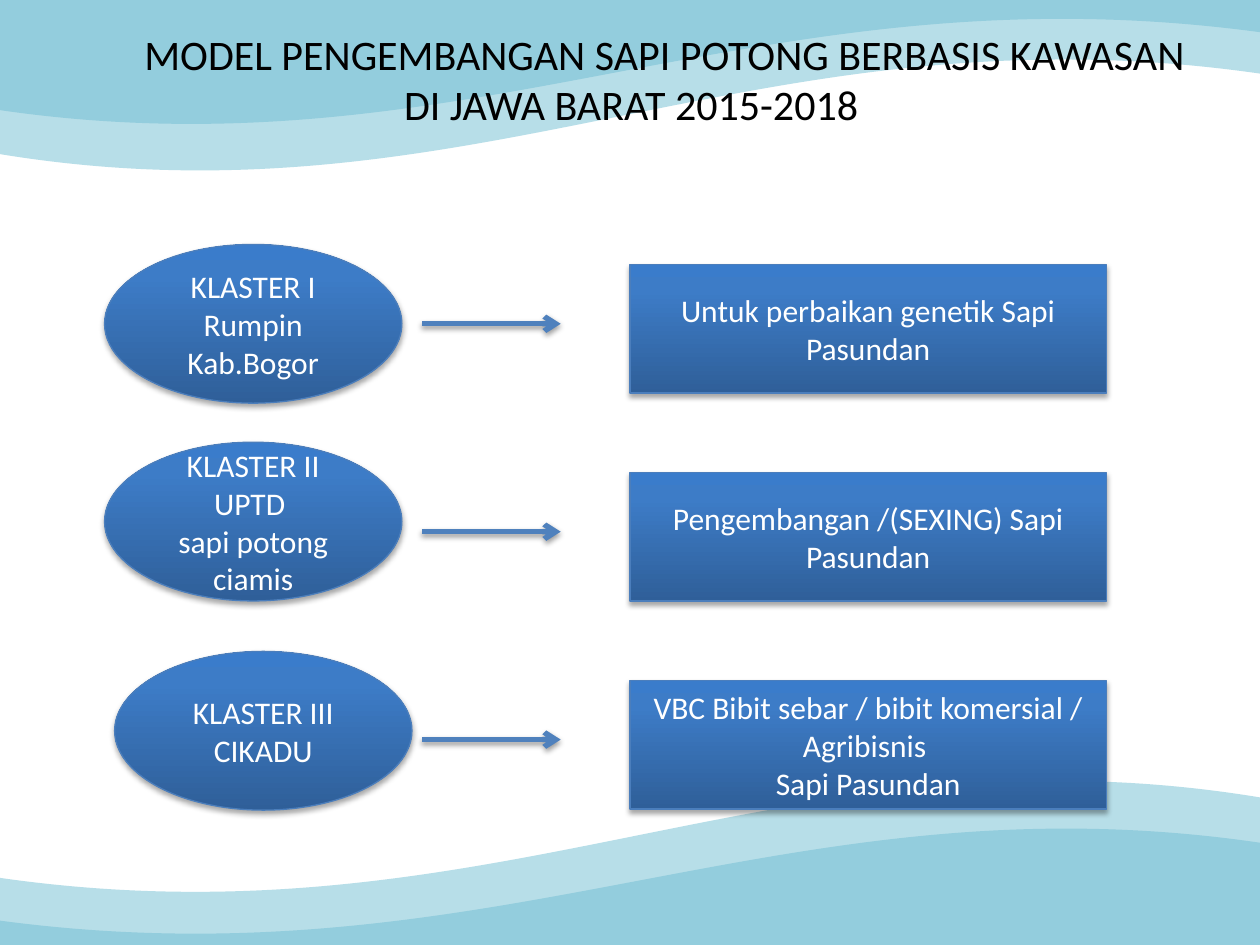
import copy

import pptx
import pptx.dml.color
import pptx.enum.shapes
import pptx.enum.text
import pptx.oxml
import pptx.oxml.ns
import pptx.util
from lxml import etree
from pptx.util import Inches

COLORS = {
    "wave_light": "B7DEE8",
    "wave_dark": "93CDDD",
    "gradient": [(0, "2F5F99"), (0.8, "3D7CC7"), (1, "3A7CCB")],
    "outline": "4B7EBC",
    "arrow": "4F81BD",
    "title": "000000",
    "label": "FFFFFF",
}
FONT = "Calibri"
TITLE = "MODEL PENGEMBANGAN SAPI POTONG BERBASIS KAWASAN DI JAWA BARAT 2015-2018"

# Color, top box, bottom box, then points (2 numbers) and Bézier segments (6 numbers)
WAVES = [
    ("wave_light", (-0.04, -0.03, 10.08, 1.38), (-0.05, 6.2),
     [(3.58, -0.03), (6.09, -0.03, 9, -0.02, 10.04, 0), (10.04, 0.59),
      (6.03, 0, 3.78, 1.85, -0.02, 1.22), (-0.04, -0.01),
      (0.65, -0.02, 2.04, -0.03, 3.58, -0.03)]),
    ("wave_dark", (-0.03, -0.05, 10.06, 1.04), (-0.05, 6.57),
     [(1.55, -0.05), (10, -0.01), (10, 0.06, 10.03, 0.19, 10.03, 0.26),
      (6.02, -0.29, 3.77, 1.43, -0.03, 0.87), (-0.03, -0.01), (1.55, -0.05)]),
]

# Ellipse left and top, ellipse lines, box lines
CLUSTERS = [
    (0.83, 1.94, ["KLASTER I Rumpin", "Kab.Bogor"],
     ["Untuk perbaikan genetik Sapi Pasundan"]),
    (0.83, 3.51, ["KLASTER II UPTD ", "sapi potong ciamis"],
     ["Pengembangan /(SEXING) Sapi Pasundan"]),
    (0.91, 5.17, ["KLASTER III", "CIKADU"],
     ["VBC Bibit sebar / bibit komersial / Agribisnis ", "Sapi Pasundan"]),
]
FIRST_BOX_TOP, ROW_STEP = 2.1, 1.65


def rgb(value):
    return pptx.dml.color.RGBColor.from_string(value)


def curve_outline(shape, segments, left, top):
    """Replace the straight outline of a freeform by lines and Bézier curves."""
    qn = pptx.oxml.ns.qn
    outline = shape._element.spPr.find(".//" + qn("a:path"))
    for child in list(outline):
        outline.remove(child)
    for index, segment in enumerate(segments):
        tag = "a:moveTo" if index == 0 else "a:lnTo" if len(segment) == 2 else "a:cubicBezTo"
        command = etree.SubElement(outline, qn(tag))
        for x, y in zip(segment[::2], segment[1::2]):
            etree.SubElement(command, qn("a:pt"),
                             x=str(Inches(x - left)), y=str(Inches(y - top)))
    etree.SubElement(outline, qn("a:close"))


def add_wave(slide, color, box, segments):
    left, top, width, height = box
    corners = [(left + width, top), (left + width, top + height), (left, top + height)]
    builder = slide.shapes.build_freeform(Inches(left), Inches(top))
    builder.add_line_segments([(Inches(x), Inches(y)) for x, y in corners])
    shape = builder.convert_to_shape()
    curve_outline(shape, segments, left, top)
    shape.shadow.inherit = False
    shape.fill.solid()
    shape.fill.fore_color.rgb = rgb(color)
    shape.line.fill.background()
    return shape


def add_turned_wave(slide, color, box, position, segments):
    shape = add_wave(slide, color, box, segments)
    shape.left, shape.top = (Inches(value) for value in position)
    shape.rotation = 180


def add_shadow(shape, alpha, distance):
    """Add a soft downward shadow; call it after the line is set."""
    shape._element.spPr.append(pptx.oxml.parse_xml(
        f'<a:effectLst {pptx.oxml.ns.nsdecls("a")}>'
        f'<a:outerShdw blurRad="40000" dist="{distance}" dir="5400000" rotWithShape="0">'
        f'<a:srgbClr val="000000"><a:alpha val="{alpha * 1000}"/></a:srgbClr>'
        '</a:outerShdw></a:effectLst>'))


def fill_gradient(shape):
    shape.fill.gradient()
    shape.fill.gradient_angle = 90
    stop_list = shape._element.spPr.find(".//" + pptx.oxml.ns.qn("a:gsLst"))
    stop_list.append(copy.deepcopy(stop_list[0]))
    for stop, (position, color) in zip(shape.fill.gradient_stops, COLORS["gradient"]):
        stop.position = position
        stop.color.rgb = rgb(color)


def write_text(shape, lines, size, color):
    frame = shape.text_frame
    frame.word_wrap = True
    frame.vertical_anchor = pptx.enum.text.MSO_ANCHOR.MIDDLE
    frame.text = "\n".join(lines)
    for paragraph in frame.paragraphs:
        paragraph.alignment = pptx.enum.text.PP_ALIGN.CENTER
        font = paragraph.runs[0].font
        font.name = FONT
        font.size = pptx.util.Pt(size)
        font.color.rgb = rgb(color)


def add_title(slide):
    title = slide.shapes.add_textbox(Inches(0.51), 0, Inches(9), Inches(1.25))
    write_text(title, [TITLE], 24, COLORS["title"])
    properties = title.text_frame.paragraphs[0]._p.get_or_add_pPr()
    properties.set("indent", str(Inches(0.53)))


def add_node(slide, kind, left, top, width, height, lines):
    shape = slide.shapes.add_shape(kind, Inches(left), Inches(top),
                                   Inches(width), Inches(height))
    fill_gradient(shape)
    shape.line.color.rgb = rgb(COLORS["outline"])
    shape.line.width = pptx.util.Pt(0.75)
    add_shadow(shape, 35, 23000)
    write_text(shape, lines, 18, COLORS["label"])


def add_arrow(slide, start, end, y):
    arrow = slide.shapes.add_connector(pptx.enum.shapes.MSO_CONNECTOR.STRAIGHT,
                                       Inches(start), Inches(y), Inches(end), Inches(y))
    arrow.line.color.rgb = rgb(COLORS["arrow"])
    arrow.line.width = pptx.util.Pt(3)
    arrow.line._get_or_add_ln().append(pptx.oxml.parse_xml(
        f'<a:tailEnd {pptx.oxml.ns.nsdecls("a")} type="arrow"/>'))
    add_shadow(arrow, 38, 20000)


def main():
    presentation = pptx.Presentation()
    presentation.slide_width = Inches(10)
    presentation.slide_height = Inches(7.5)
    slide = presentation.slides.add_slide(presentation.slide_layouts[6])

    for color, box, bottom_position, segments in WAVES:
        add_turned_wave(slide, COLORS[color], box, bottom_position, segments)
    for color, box, _, segments in WAVES:
        add_wave(slide, COLORS[color], box, segments)

    add_title(slide)
    kinds = pptx.enum.shapes.MSO_SHAPE
    box_tops = [FIRST_BOX_TOP + row * ROW_STEP for row in range(len(CLUSTERS))]
    for left, top, lines, _ in CLUSTERS:
        add_node(slide, kinds.OVAL, left, top, 2.36, 1.26, lines)
    for box_top in box_tops:
        add_arrow(slide, 3.35, 4.45, box_top + 0.47)
    for box_top, (*_, lines) in zip(box_tops, CLUSTERS):
        add_node(slide, kinds.RECTANGLE, 5, box_top, 3.78, 1.02, lines)

    presentation.save("out.pptx")


if __name__ == "__main__":
    main()
